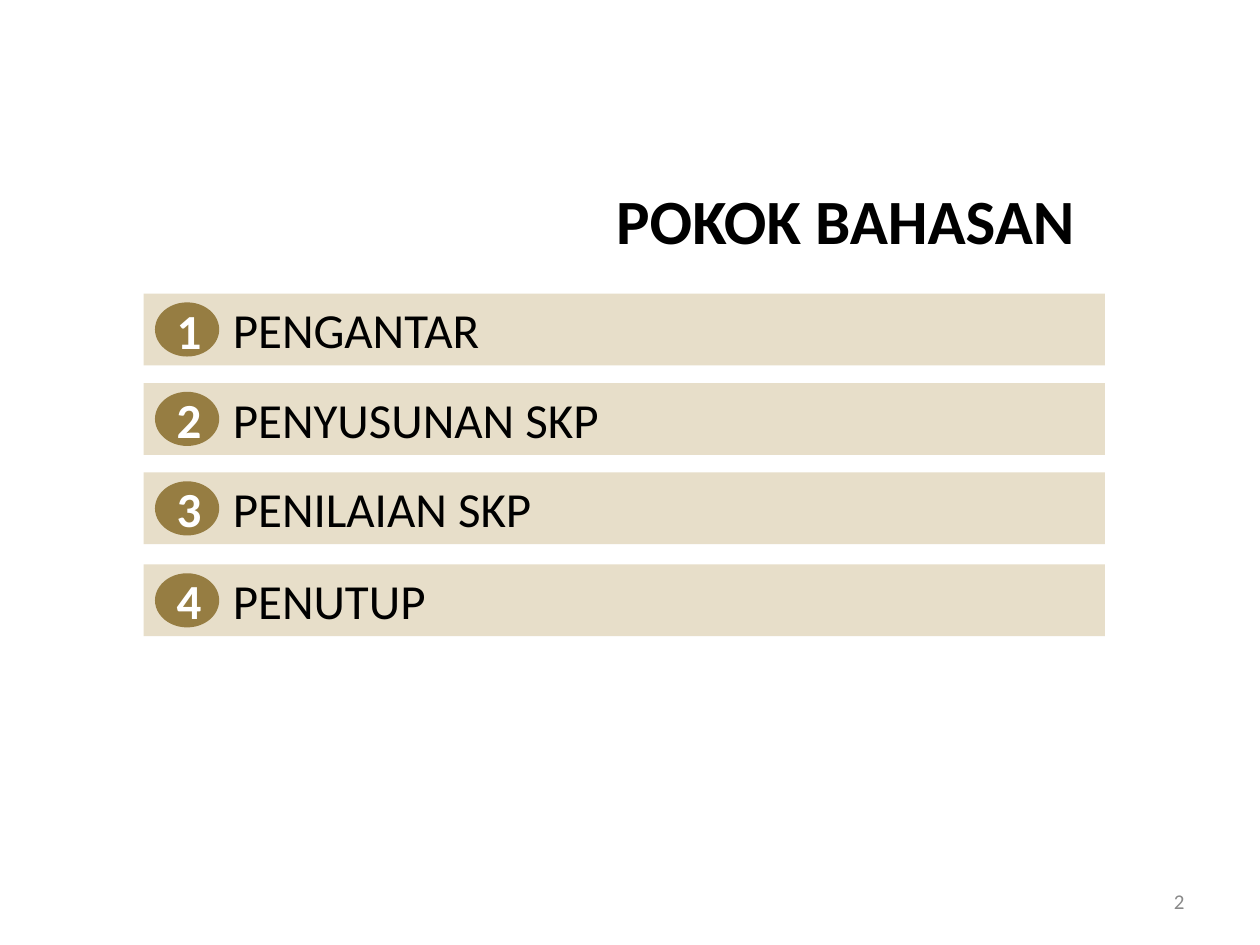
import pptx
import pptx.dml.color
import pptx.enum.shapes
import pptx.enum.text
import pptx.util
from pptx.util import Inches

BLACK = pptx.dml.color.RGBColor(0x00, 0x00, 0x00)
WHITE = pptx.dml.color.RGBColor(0xFF, 0xFF, 0xFF)
GREY = pptx.dml.color.RGBColor(0x89, 0x89, 0x89)
SAND = pptx.dml.color.RGBColor(0xE7, 0xDE, 0xC9)
BRONZE = pptx.dml.color.RGBColor(0x96, 0x7D, 0x42)

ALIGN = pptx.enum.text.PP_ALIGN
ANCHOR = pptx.enum.text.MSO_ANCHOR
SHAPE = pptx.enum.shapes.MSO_SHAPE

TOPICS = [
    ("PENGANTAR", 2.33),
    ("PENYUSUNAN SKP", 3.04),
    ("PENILAIAN SKP", 3.75),
    ("PENUTUP", 4.48),
]


def write_text(shape, text, size, color, alignment, anchor, bold=False):
    """Put one formatted line of text into a shape and return its paragraph."""
    frame = shape.text_frame
    frame.text = text
    frame.word_wrap = True
    frame.auto_size = pptx.enum.text.MSO_AUTO_SIZE.NONE
    frame.vertical_anchor = anchor
    paragraph = frame.paragraphs[0]
    paragraph.alignment = alignment
    font = paragraph.runs[0].font
    font.name = "Calibri"
    font.size = pptx.util.Pt(size)
    font.bold = bold
    font.color.rgb = color
    return paragraph


def add_filled_shape(slide, kind, left, top, width, height, color):
    """Add a flat preset shape without outline or shadow."""
    shape = slide.shapes.add_shape(kind, left, top, width, height)
    shape.shadow.inherit = False
    shape.fill.solid()
    shape.fill.fore_color.rgb = color
    shape.line.fill.background()
    return shape


def add_title(slide, left, top, width, height):
    """Place the slide title in its placeholder."""
    title = slide.shapes.title
    title.left, title.top, title.width, title.height = left, top, width, height
    write_text(title, "POKOK BAHASAN", 36, BLACK, ALIGN.RIGHT, ANCHOR.TOP, bold=True)


def add_topic(slide, number, topic, left, top, width, height):
    """Draw one topic bar with its numbered badge."""
    bar = add_filled_shape(slide, SHAPE.RECTANGLE, left, top, width, height, SAND)
    paragraph = write_text(bar, topic, 28, BLACK, ALIGN.LEFT, ANCHOR.TOP)
    properties = paragraph._p.get_or_add_pPr()
    properties.set("marL", str(Inches(0.61)))
    properties.set("indent", "0")

    badge_height = Inches(0.43)
    badge_top = top + (height - badge_height) // 2
    badge = add_filled_shape(slide, SHAPE.OVAL, left + Inches(0.09), badge_top,
                             Inches(0.51), badge_height, BRONZE)
    write_text(badge, str(number), 28, WHITE, ALIGN.CENTER, ANCHOR.MIDDLE, bold=True)


def add_page_number(slide, left, top, width, height):
    """Write the page number in the lower right corner."""
    box = slide.shapes.add_textbox(left, top, width, height)
    write_text(box, "2", 12, GREY, ALIGN.RIGHT, ANCHOR.MIDDLE)


def main():
    """Build the agenda slide and save it."""
    presentation = pptx.Presentation()
    presentation.slide_width = Inches(10)
    presentation.slide_height = Inches(7.5)
    slide = presentation.slides.add_slide(presentation.slide_layouts[5])
    add_page_number(slide, Inches(7.17), Inches(6.95), Inches(2.33), Inches(0.4))
    add_title(slide, Inches(1.54), Inches(1.39), Inches(7.09), Inches(0.71))
    for number, (topic, top) in enumerate(TOPICS, start=1):
        add_topic(slide, number, topic, Inches(1.14), Inches(top), Inches(7.63), Inches(0.57))
    presentation.save("out.pptx")


if __name__ == "__main__":
    main()
